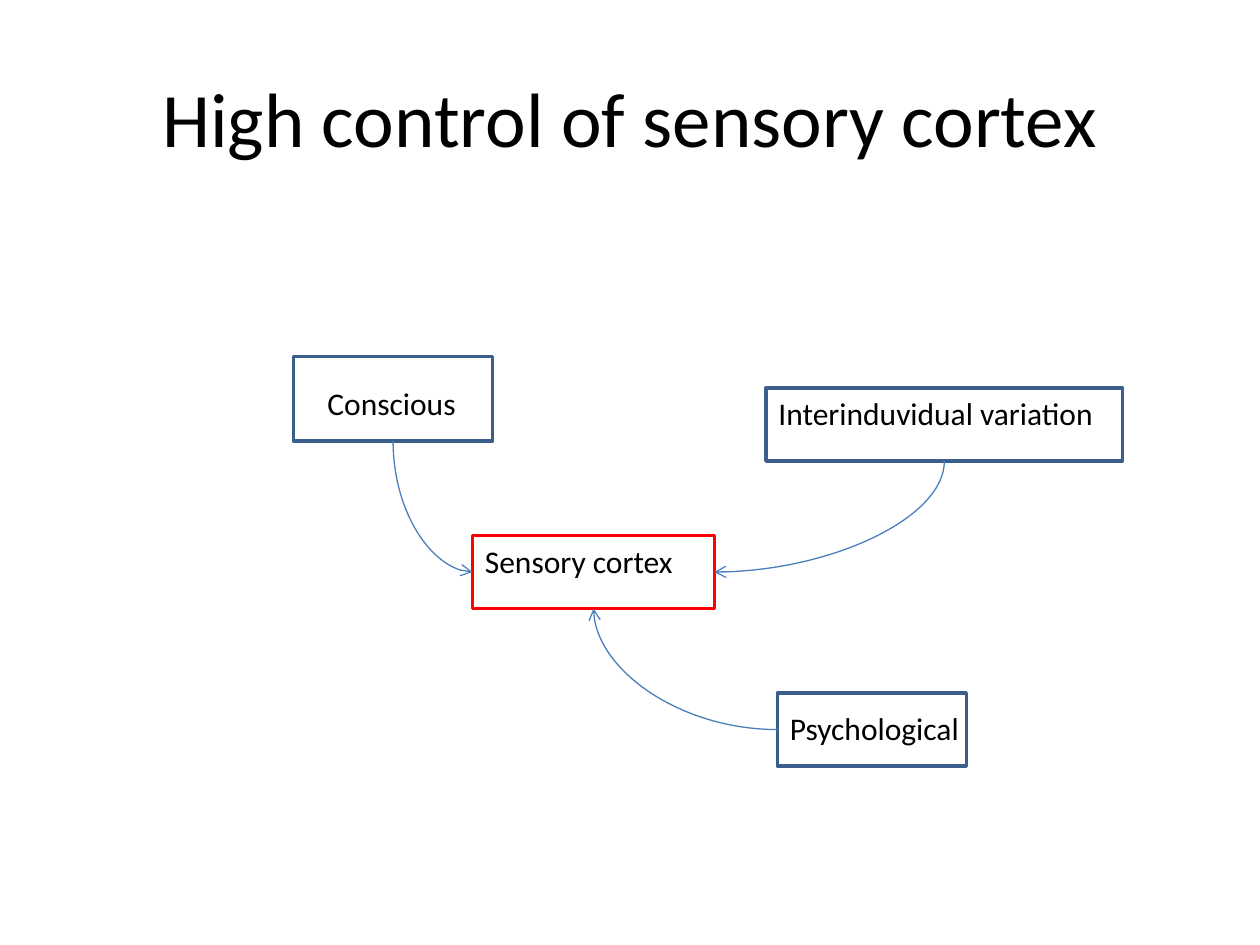
"""Build a slide showing the influences that control the sensory cortex."""
from lxml.etree import SubElement
from pptx import Presentation
from pptx.dml.color import RGBColor
from pptx.enum.shapes import MSO_CONNECTOR as Connector, MSO_SHAPE as Shape
from pptx.enum.text import MSO_ANCHOR as Anchor, MSO_AUTO_SIZE as AutoSize, PP_ALIGN as Align
from pptx.oxml.ns import qn
from pptx.util import Inches, Pt

BLACK = RGBColor(0x00, 0x00, 0x00)
RED = RGBColor(0xFF, 0x00, 0x00)
BORDER_BLUE = RGBColor(0x3A, 0x5F, 0x8C)
ARROW_BLUE = RGBColor(0x4B, 0x7E, 0xBC)
LEFT, BOTTOM, RIGHT = 1, 2, 3


def write_text(frame, text, size=18, align=Align.LEFT, anchor=Anchor.TOP, wrap=False):
    frame.word_wrap = wrap
    frame.vertical_anchor = anchor
    paragraph = frame.paragraphs[0]
    paragraph.text = text
    paragraph.alignment = align
    paragraph.font.name = "Calibri"
    paragraph.font.size = Pt(size)
    paragraph.font.color.rgb = BLACK


presentation = Presentation()
presentation.slide_width, presentation.slide_height = Inches(10), Inches(7.5)
slide = presentation.slides.add_slide(presentation.slide_layouts[5])

title = slide.shapes.title
title.left, title.top, title.width, title.height = map(Inches, (0.5, 0.3, 9, 1.25))
write_text(title.text_frame, "High control of sensory cortex", size=44,
           align=Align.CENTER, anchor=Anchor.MIDDLE, wrap=True)

factors = [
    ("Sensory cortex", (3.75, 4.25, 1.71, 0.4), (3.75, 4.25, 1.92, 0.58), RED),
    ("Conscious", (2.5, 3, 1.29, 0.4), (2.33, 2.83, 1.58, 0.67), BORDER_BLUE),
    ("Interinduvidual variation", (6.08, 3.08, 2.79, 0.4), (6.08, 3.08, 2.83, 0.58), BORDER_BLUE),
    ("Psychological", (6.17, 5.58, 1.62, 0.4), (6.17, 5.5, 1.5, 0.58), BORDER_BLUE),
]

for name, label_area, _, _ in factors:
    label = slide.shapes.add_textbox(*map(Inches, label_area))
    write_text(label.text_frame, name)
    label.text_frame.auto_size = AutoSize.SHAPE_TO_FIT_TEXT

frames = {}
for name, _, frame_area, color in factors:
    frame = slide.shapes.add_shape(Shape.RECTANGLE, *map(Inches, frame_area))
    frame.shadow.inherit = False
    frame.fill.background()
    frame.line.color.rgb = color
    frame.line.width = Pt(2)
    frames[name] = frame

influences = [
    ("Conscious", BOTTOM, LEFT, 270, True),
    ("Interinduvidual variation", BOTTOM, RIGHT, 90, False),
    ("Psychological", LEFT, BOTTOM, 180, False),
]

for name, start_side, end_side, angle, flipped in influences:
    arrow = slide.shapes.add_connector(Connector.CURVE, 0, 0, 0, 0)
    arrow.begin_connect(frames[name], start_side)
    arrow.end_connect(frames["Sensory cortex"], end_side)
    center_x = (arrow.begin_x + arrow.end_x) // 2
    center_y = (arrow.begin_y + arrow.end_y) // 2
    width, height = arrow.width, arrow.height
    if angle != 180:
        width, height = height, width
    arrow.left, arrow.top = center_x - width // 2, center_y - height // 2
    arrow.width, arrow.height = width, height
    arrow.line.color.rgb = ARROW_BLUE
    arrow.line.width = Pt(0.75)

    properties = arrow._element.spPr
    transform = properties.find(qn("a:xfrm"))
    transform.set("rot", str(angle * 60000))
    transform.set("flipH", str(int(flipped)))
    transform.set("flipV", "0")
    properties.find(qn("a:prstGeom")).set("prst", "curvedConnector2")
    SubElement(properties.find(qn("a:ln")), qn("a:tailEnd"), type="arrow")
    SubElement(properties, qn("a:effectLst"))

presentation.save("out.pptx")
